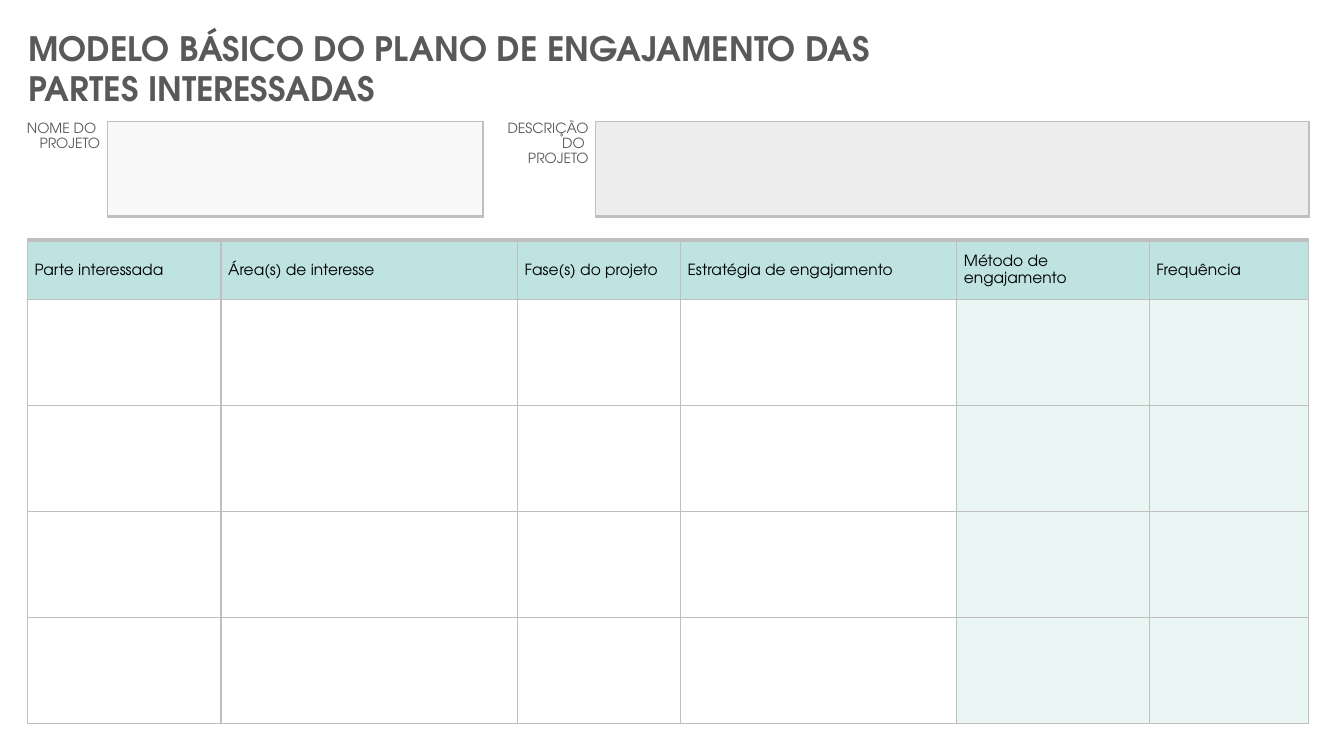
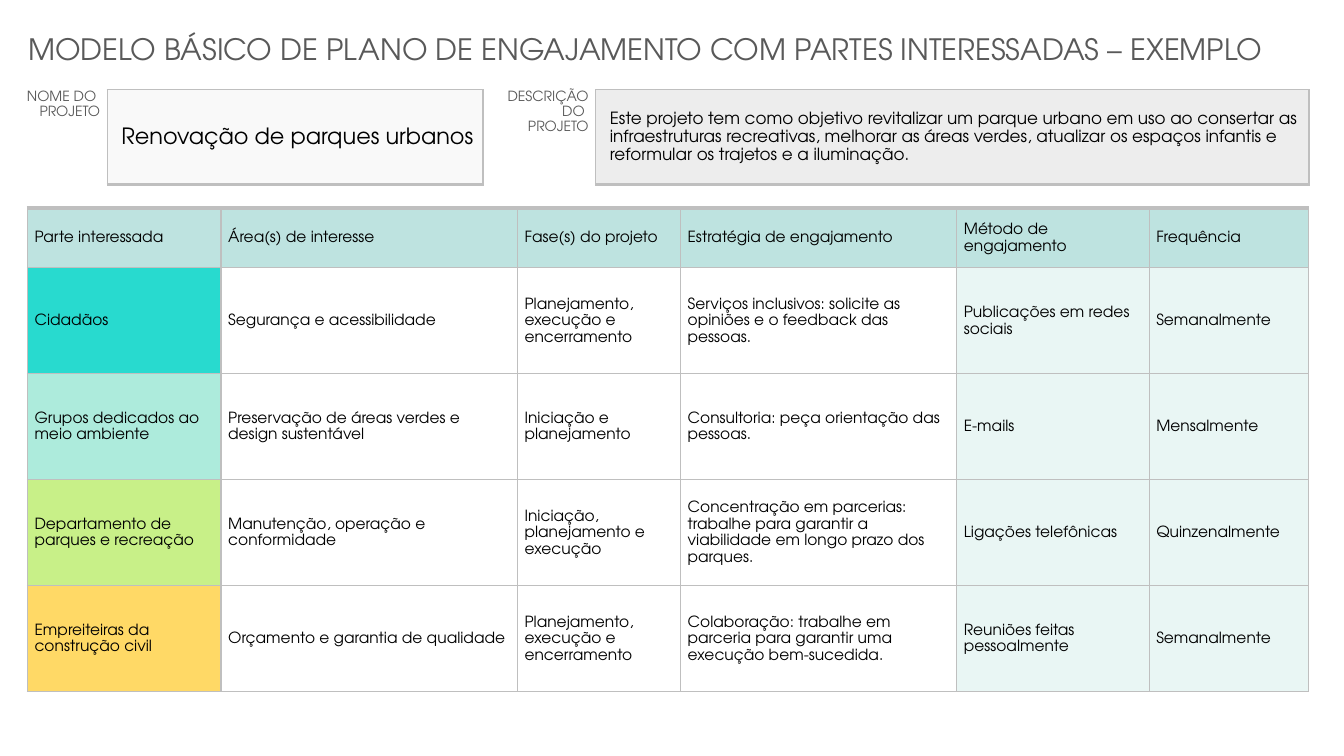
"""Builds the two stakeholder engagement plan slides: blank form and worked example."""
from dataclasses import dataclass

from lxml.etree import SubElement
from pptx import Presentation
from pptx.dml.color import RGBColor
from pptx.enum.text import MSO_ANCHOR as Anchor, MSO_AUTO_SIZE as AutoSize, PP_ALIGN as Align
from pptx.oxml.ns import qn
from pptx.util import Cm, Pt

FONT = "TeX Gyre Adventor"
GREY, BLACK, RULE = "595959", "000000", "BFBFBF"
WHITE, HEADER, MINT = "FFFFFF", "BEE3E0", "E9F6F4"
NAME_FILL, DESCRIPTION_FILL = "F9F9F9", "EDEDED"
NO_STYLE = "{2D5ABB26-0587-4C30-8999-92F81FD0307C}"
BOX = {"L": 1, "R": 1, "T": 1, "B": 1}
FIELD_BOX = BOX | {"B": 2.25}
HEADER_BOX = BOX | {"T": 3}

LEFT, GRID_LEFT = 0.46, 0.69
FIELD_HEIGHT, GRID_OFFSET = 2.39, 2.98
CELL_MARGIN = 0.18
HEADER_HEIGHT, ROW_HEIGHT = 1.5, 2.67
COLUMNS = (4.88, 7.47, 4.11, 6.96, 4.85, 4.01)
HEADINGS = ("Parte interessada", "Área(s) de interesse", "Fase(s) do projeto",
            "Estratégia de engajamento", "Método de engajamento", "Frequência")


@dataclass(frozen=True)
class Title:
    """Wording and look of a slide title."""
    text: str
    top: float
    width: float
    size: float
    bold: bool = False


@dataclass(frozen=True)
class Field:
    """A labelled project field."""
    label: tuple[str, ...]
    left: float
    label_width: float
    value_width: float
    fill: str
    size: float


@dataclass(frozen=True)
class Stakeholder:
    """One row of the engagement grid."""
    texts: tuple[str, ...] = ("",) * len(COLUMNS)
    fill: str = WHITE


@dataclass(frozen=True)
class Plan:
    """Content of one slide."""
    title: Title
    fields_top: float
    values: tuple[str, str]
    stakeholders: tuple[Stakeholder, ...]


FIELDS = (
    Field(("NOME DO ", "PROJETO"), LEFT, 2.24, 9.47, NAME_FILL, 16),
    Field(("DESCRIÇÃO DO ", "PROJETO"), 12.17, 2.84, 17.98, DESCRIPTION_FILL, 12),
)

PLANS = (
    Plan(Title("MODELO BÁSICO DO PLANO DE ENGAJAMENTO DAS PARTES INTERESSADAS",
               0.58, 23.19, 24, True),
         3.07, ("", ""), (Stakeholder(),) * 4),
    Plan(Title("MODELO BÁSICO DE PLANO DE ENGAJAMENTO COM PARTES INTERESSADAS – EXEMPLO",
               0.66, 32.26, 21),
         2.26,
         ("Renovação de parques urbanos",
          "Este projeto tem como objetivo revitalizar um parque urbano em uso ao consertar as "
          "infraestruturas recreativas, melhorar as áreas verdes, atualizar os espaços infantis "
          "e reformular os trajetos e a iluminação."),
         (Stakeholder(("Cidadãos", "Segurança e acessibilidade",
                       "Planejamento, execução e encerramento",
                       "Serviços inclusivos: solicite as opiniões e o feedback das pessoas.",
                       "Publicações em redes sociais", "Semanalmente"), "28DACF"),
          Stakeholder(("Grupos dedicados ao meio ambiente",
                       "Preservação de áreas verdes e design sustentável",
                       "Iniciação e planejamento",
                       "Consultoria: peça orientação das pessoas.",
                       "E-mails", "Mensalmente"), "ADEBDC"),
          Stakeholder(("Departamento de parques e recreação",
                       "Manutenção, operação e conformidade",
                       "Iniciação, planejamento e execução",
                       "Concentração em parcerias: trabalhe para garantir a viabilidade em "
                       "longo prazo dos parques.",
                       "Ligações telefônicas", "Quinzenalmente"), "C8F088"),
          Stakeholder(("Empreiteiras da construção civil", "Orçamento e garantia de qualidade",
                       "Planejamento, execução e encerramento",
                       "Colaboração: trabalhe em parceria para garantir uma execução "
                       "bem-sucedida.",
                       "Reuniões feitas pessoalmente", "Semanalmente"), "FFD966"))),
)


def rgb(colour: str) -> RGBColor:
    return RGBColor.from_string(colour)


def add_run(paragraph, text: str, size: float, colour: str, bold: bool = False) -> None:
    run = paragraph.add_run()
    run.text = text
    run.font.name = FONT
    run.font.size = Pt(size)
    run.font.bold = bold
    run.font.color.rgb = rgb(colour)


def add_title(slide, title: Title) -> None:
    height = title.size * 0.05
    box = slide.shapes.add_textbox(Cm(LEFT), Cm(title.top), Cm(title.width), Cm(height))
    frame = box.text_frame
    frame.word_wrap = True
    frame.auto_size = AutoSize.SHAPE_TO_FIT_TEXT
    add_run(frame.paragraphs[0], title.text, title.size, GREY, title.bold)


def add_plain_table(slide, left: float, top: float, widths: tuple[float, ...],
                    heights: tuple[float, ...]):
    frame = slide.shapes.add_table(len(heights), len(widths), Cm(left), Cm(top),
                                   Cm(sum(widths)), Cm(sum(heights)))
    table = frame.table
    table.first_row = table.horz_banding = False
    table._tbl.tblPr.find(qn("a:tableStyleId")).text = NO_STYLE
    for column, width in zip(table.columns, widths):
        column.width = Cm(width)
    for row, height in zip(table.rows, heights):
        row.height = Cm(height)
    return table


def style_cell(cell, borders: dict[str, float], fill: str | None = None) -> None:
    properties = cell._tc.get_or_add_tcPr()
    for side in "LRTB":
        width = borders.get(side)
        line = SubElement(properties, qn(f"a:ln{side}"), w=str(Pt(width or 0)))
        if width:
            solid = SubElement(line, qn("a:solidFill"))
            SubElement(solid, qn("a:srgbClr"), val=RULE)
        else:
            SubElement(line, qn("a:noFill"))
    if fill:
        cell.fill.solid()
        cell.fill.fore_color.rgb = rgb(fill)
    else:
        cell.fill.background()
    cell.margin_left = cell.margin_right = Cm(CELL_MARGIN)
    cell.margin_top = cell.margin_bottom = 0


def write_cell(cell, lines: tuple[str, ...], size: float, colour: str = BLACK,
               align: Align = Align.LEFT, anchor: Anchor = Anchor.MIDDLE,
               indent: float = 0) -> None:
    cell.vertical_anchor = anchor
    paragraph = cell.text_frame.paragraphs[0]
    paragraph.alignment = align
    paragraph.line_spacing = 1.15
    if indent:
        paragraph._p.get_or_add_pPr().set("marL", str(Cm(indent)))
    for number, line in enumerate(lines):
        if number:
            paragraph.add_line_break()
        if line:
            add_run(paragraph, line, size, colour)


def add_field(slide, field: Field, top: float, value: str) -> None:
    table = add_plain_table(slide, field.left, top, (field.label_width, field.value_width),
                            (FIELD_HEIGHT,))
    label, entry = table.cell(0, 0), table.cell(0, 1)
    style_cell(label, {"R": 1})
    write_cell(label, field.label, 10, GREY, Align.RIGHT, Anchor.TOP)
    style_cell(entry, FIELD_BOX, field.fill)
    write_cell(entry, (value,), field.size, indent=CELL_MARGIN)


def add_grid(slide, top: float, stakeholders: tuple[Stakeholder, ...]) -> None:
    heights = (HEADER_HEIGHT,) + (ROW_HEIGHT,) * len(stakeholders)
    table = add_plain_table(slide, GRID_LEFT, top, COLUMNS, heights)
    for column, heading in enumerate(HEADINGS):
        cell = table.cell(0, column)
        style_cell(cell, HEADER_BOX, HEADER)
        write_cell(cell, (heading,), 11)
    for row, stakeholder in enumerate(stakeholders, start=1):
        fills = (stakeholder.fill, WHITE, WHITE, WHITE, MINT, MINT)
        for column, (text, fill) in enumerate(zip(stakeholder.texts, fills)):
            cell = table.cell(row, column)
            style_cell(cell, BOX, fill)
            write_cell(cell, (text,), 11)


def main() -> None:
    deck = Presentation()
    deck.slide_width, deck.slide_height = Cm(33.87), Cm(19.05)
    for plan in PLANS:
        slide = deck.slides.add_slide(deck.slide_layouts[6])
        add_title(slide, plan.title)
        for field, value in zip(FIELDS, plan.values):
            add_field(slide, field, plan.fields_top, value)
        add_grid(slide, plan.fields_top + GRID_OFFSET, plan.stakeholders)
    deck.save("out.pptx")


if __name__ == "__main__":
    main()
